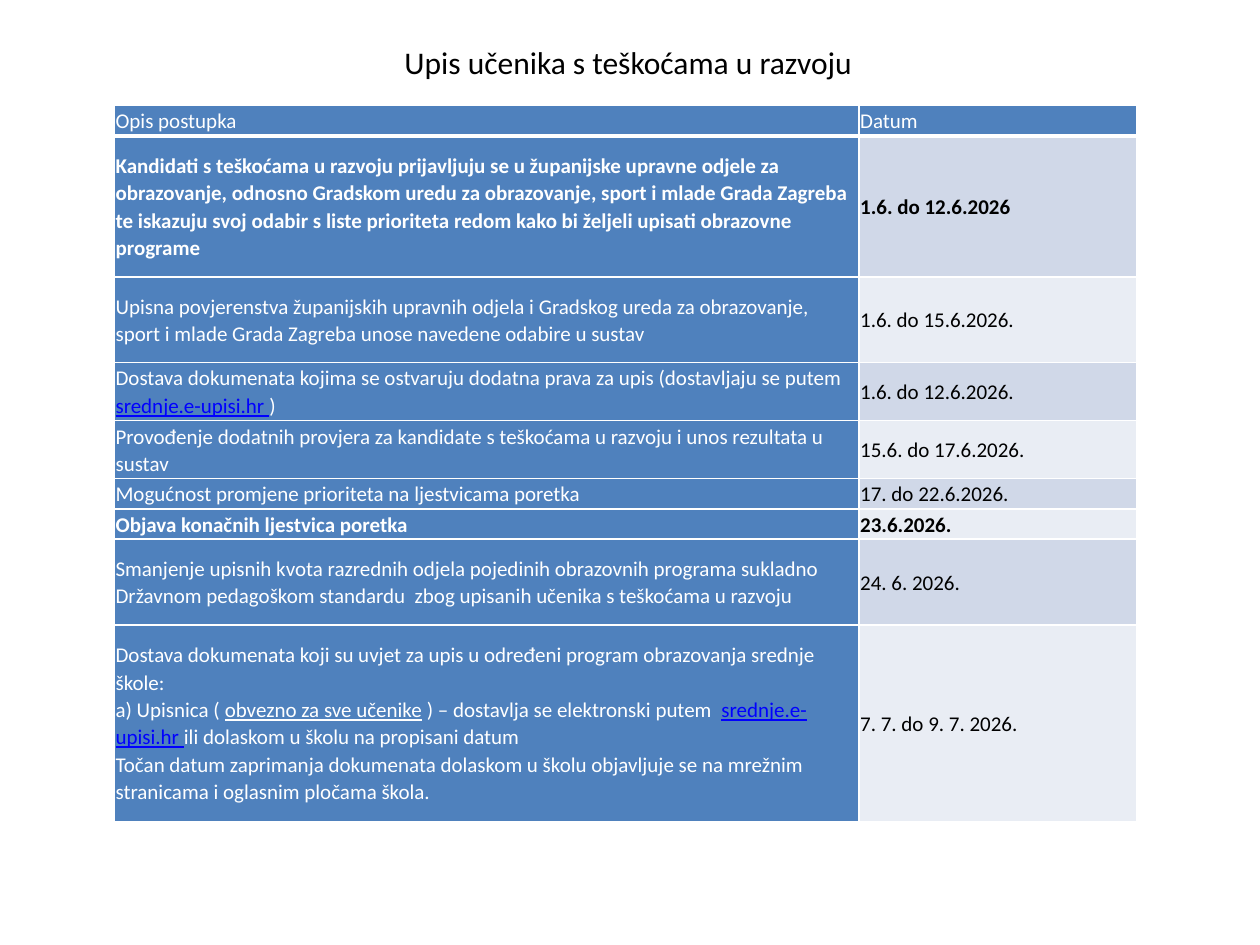
import dataclasses

import lxml.etree
import pptx
import pptx.dml.color
import pptx.enum.text
import pptx.oxml.ns
import pptx.util

Cm = pptx.util.Cm
Pt = pptx.util.Pt
Anchor = pptx.enum.text.MSO_ANCHOR


@dataclasses.dataclass(frozen=True)
class Theme:
    font: str = "Calibri"
    title_size: int = 18
    table_size: int = 12
    dark: str = "000000"
    light: str = "FFFFFF"
    link: str = "0000FF"
    accent: str = "4F81BD"
    bands: tuple = ("D0D8E8", "E9EDF4")
    thin_line: int = 1
    header_line: int = 3
    line_spacing: float = 1.07


def write_text(frame, paragraphs, *, font, size, color, bold=False, spacing=None):
    """Each paragraph is a string or a list of strings and (text, changes) pairs."""
    for index, parts in enumerate(paragraphs):
        para = frame.paragraphs[0] if index == 0 else frame.add_paragraph()
        para.alignment = pptx.enum.text.PP_ALIGN.LEFT
        para.space_before = Pt(0)
        if spacing:
            para.line_spacing = spacing
        for part in [parts] if isinstance(parts, str) else parts:
            text, changes = (part, {}) if isinstance(part, str) else part
            span = para.add_run()
            span.text = text
            span.font.name = font
            span.font.size = Pt(size)
            span.font.bold = bold
            span.font.underline = changes.get("underline", False)
            span.font.color.rgb = pptx.dml.color.RGBColor.from_string(
                changes.get("color", color))


class PageBuilder:
    def __init__(self, page, theme):
        self.page = page
        self.theme = theme

    def title(self, text, left, top, width, height):
        box = self.page.shapes.title
        box.left, box.top, box.width, box.height = map(Cm, (left, top, width, height))
        frame = box.text_frame
        frame.word_wrap = True
        frame.auto_size = pptx.enum.text.MSO_AUTO_SIZE.NONE
        frame.vertical_anchor = Anchor.TOP
        write_text(frame, [text], font=self.theme.font,
                   size=self.theme.title_size, color=self.theme.dark)

    def borders(self, cell, top, bottom):
        properties = cell._tc.get_or_add_tcPr()
        thin = self.theme.thin_line
        for side, points in (("L", thin), ("R", thin), ("T", top), ("B", bottom)):
            line = lxml.etree.SubElement(
                properties, pptx.oxml.ns.qn("a:ln" + side), w=str(Pt(points)))
            fill = lxml.etree.SubElement(line, pptx.oxml.ns.qn("a:solidFill"))
            lxml.etree.SubElement(
                fill, pptx.oxml.ns.qn("a:srgbClr"), val=self.theme.light)

    def cell(self, cell, paragraphs, fill, color, bold, top, bottom):
        cell.margin_left = cell.margin_right = Cm(0.02)
        cell.margin_top = cell.margin_bottom = Cm(0.02)
        cell.vertical_anchor = Anchor.MIDDLE
        self.borders(cell, top, bottom)
        cell.fill.solid()
        cell.fill.fore_color.rgb = pptx.dml.color.RGBColor.from_string(fill)
        write_text(cell.text_frame, paragraphs, font=self.theme.font,
                   size=self.theme.table_size, color=color, bold=bold,
                   spacing=self.theme.line_spacing)

    def table(self, rows, left, top, widths):
        """Each row is (height, bold, description paragraphs, date)."""
        theme = self.theme
        height = sum(row[0] for row in rows)
        table = self.page.shapes.add_table(
            len(rows), len(widths), Cm(left), Cm(top),
            Cm(sum(widths)), Cm(height)).table
        table.horz_banding = False
        for column, width in zip(table.columns, widths):
            column.width = Cm(width)
        for index, (height, bold, description, date) in enumerate(rows):
            table.rows[index].height = Cm(height)
            header = index == 0
            # The rule under the header is shared with the first body row
            upper = theme.header_line if index == 1 else theme.thin_line
            lower = theme.header_line if header else theme.thin_line
            date_fill = theme.accent if header else theme.bands[(index - 1) % 2]
            date_color = theme.light if header else theme.dark
            self.cell(table.cell(index, 0), description, theme.accent,
                      theme.light, bold, upper, lower)
            self.cell(table.cell(index, 1), [date], date_fill,
                      date_color, bold, upper, lower)


def main():
    theme = Theme()
    deck = pptx.Presentation()
    deck.slide_width, deck.slide_height = Cm(25.4), Cm(19.05)
    page = deck.slides.add_slide(deck.slide_layouts.get_by_name("Title Only"))
    builder = PageBuilder(page, theme)

    # Heading
    builder.title("Upis učenika s teškoćama u razvoju", 7.9, 0.74, 10.21, 1.02)

    # Enrolment calendar
    site = ("srednje.e-upisi.hr ", {"color": theme.link, "underline": True})
    rows = [
        (0.61, False, ["Opis postupka"], "Datum"),
        (2.84, True,
         ["Kandidati s teškoćama u razvoju prijavljuju se u županijske upravne "
          "odjele za obrazovanje, odnosno Gradskom uredu za obrazovanje, sport i "
          "mlade Grada Zagreba te iskazuju svoj odabir s liste prioriteta redom "
          "kako bi željeli upisati obrazovne programe"], "1.6. do 12.6.2026"),
        (1.73, False,
         ["Upisna povjerenstva županijskih upravnih odjela i Gradskog ureda za "
          "obrazovanje, sport i mlade Grada Zagreba unose navedene odabire u "
          "sustav"], "1.6. do 15.6.2026."),
        (1.17, False,
         [["Dostava dokumenata kojima se ostvaruju dodatna prava za upis "
           "(dostavljaju se putem ", site, ")"]], "1.6. do 12.6.2026."),
        (1.17, False,
         ["Provođenje dodatnih provjera za kandidate s teškoćama u razvoju i "
          "unos rezultata u sustav"], "15.6. do 17.6.2026."),
        (0.61, False,
         ["Mogućnost promjene prioriteta na ljestvicama poretka"],
         "17. do 22.6.2026."),
        (0.61, True, ["Objava konačnih ljestvica poretka"], "23.6.2026."),
        (1.73, False,
         ["Smanjenje upisnih kvota razrednih odjela pojedinih obrazovnih "
          "programa sukladno Državnom pedagoškom standardu  zbog upisanih "
          "učenika s teškoćama u razvoju"], "24. 6. 2026."),
        (3.96, False,
         ["Dostava dokumenata koji su uvjet za upis u određeni program "
          "obrazovanja srednje škole:",
          ["a) Upisnica ( ", ("obvezno za sve učenike", {"underline": True}),
           " ) – dostavlja se elektronski putem  ", site,
           "ili dolaskom u školu na propisani datum"],
          "Točan datum zaprimanja dokumenata dolaskom u školu objavljuje se na "
          "mrežnim stranicama i oglasnim pločama škola."],
         "7. 7. do 9. 7. 2026."),
    ]
    builder.table(rows, 2.31, 2.13, (15.01, 5.59))

    deck.save("out.pptx")


if __name__ == "__main__":
    main()
